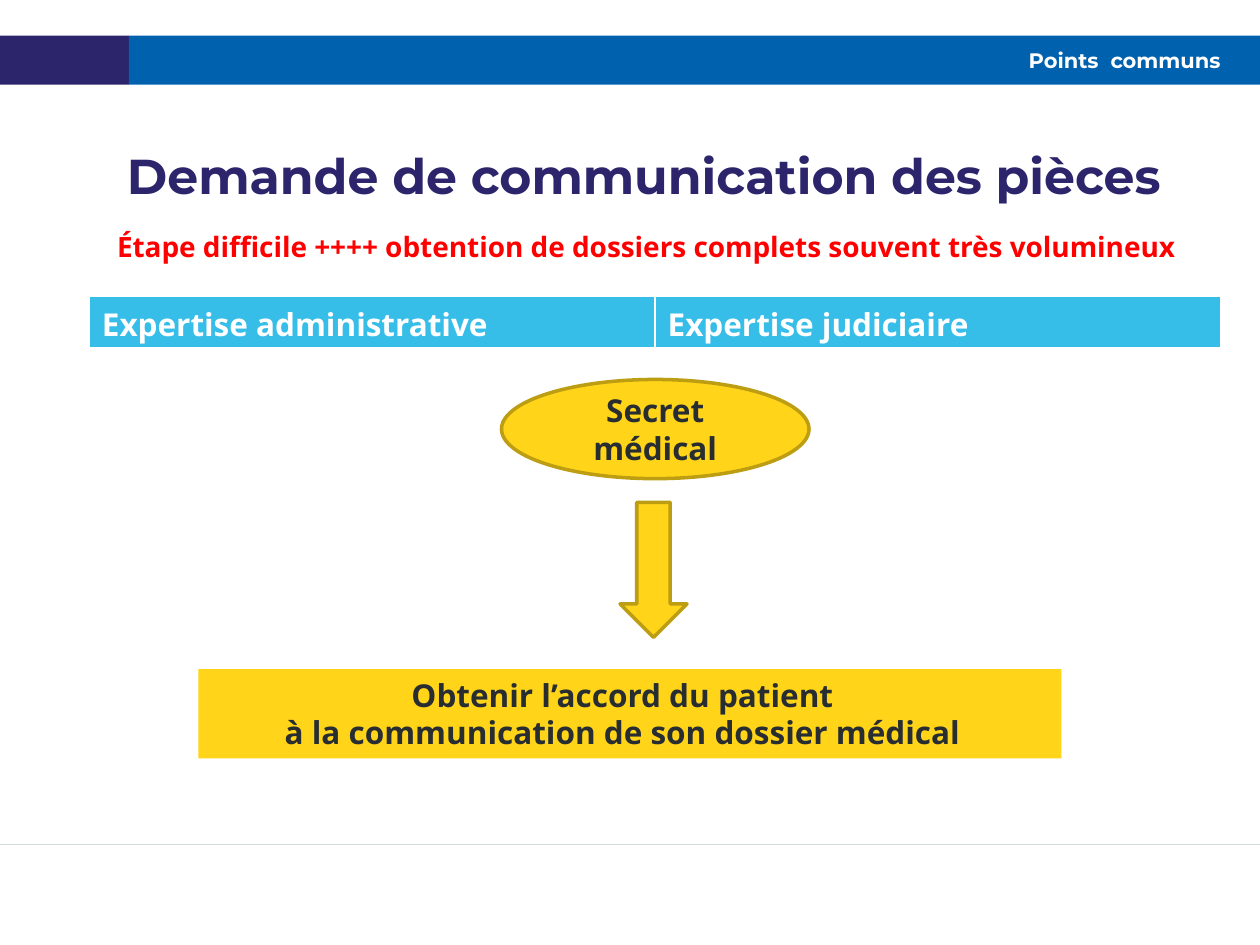
"""Build the slide on asking for the documents of a medical file."""
from lxml import etree
from pptx import Presentation
from pptx.dml.color import RGBColor
from pptx.enum.shapes import MSO_CONNECTOR, MSO_SHAPE
from pptx.enum.text import MSO_ANCHOR, PP_ALIGN
from pptx.oxml.ns import qn
from pptx.util import Cm, Pt

RECT, OVAL, DOWN = MSO_SHAPE.RECTANGLE, MSO_SHAPE.OVAL, MSO_SHAPE.DOWN_ARROW
LEFT, MID, RIGHT = PP_ALIGN.LEFT, PP_ALIGN.CENTER, PP_ALIGN.RIGHT
TOP, CENTRE = MSO_ANCHOR.TOP, MSO_ANCHOR.MIDDLE
STRAIGHT = MSO_CONNECTOR.STRAIGHT

WHITE = RGBColor(0xFF, 0xFF, 0xFF)
NAVY = RGBColor(0x2C, 0x25, 0x6B)
BLUE = RGBColor(0x00, 0x62, 0xAE)
SKY = RGBColor(0x36, 0xBD, 0xE8)
GOLD = RGBColor(0xFF, 0xD4, 0x19)
OCHRE = RGBColor(0xBD, 0x9D, 0x12)
INK = RGBColor(0x27, 0x2D, 0x31)
RED = RGBColor(0xFF, 0x00, 0x00)
GREY = RGBColor(0xD2, 0xD9, 0xDA)

HEAD, BODY = "Montserrat", "Open Sans"
WIDE, HIGH = 25.4, 19.05
SPLIT, BAND, DEEP = 2.6, 0.72, 0.99
EDGE, SPAN, ROW = 1.8, 22.81, 1.04
PAD = (0.25, 0.13, 0.25, 0.13)
NONE = (0, 0, 0, 0)

TOPIC = ["Points  communs"]
TITLE = ["Demande de communication des pièces"]
ALERT = ["Étape difficile ++++ obtention de dossiers complets souvent très volumineux"]
KINDS = ["Expertise administrative", "Expertise judiciaire"]
SECRET = ["Secret médical"]
ACCORD = ["Obtenir l’accord du patient", "à la communication de son dossier médical"]


def write(frame, lines, size, color, font=BODY, align=LEFT, pad=PAD, anchor=TOP):
    frame.word_wrap = True
    frame.vertical_anchor = anchor
    (frame.margin_left, frame.margin_top,
     frame.margin_right, frame.margin_bottom) = map(Cm, pad)
    for i, line in enumerate(lines):
        para = frame.add_paragraph() if i else frame.paragraphs[0]
        para.alignment = align
        run = para.add_run()
        run.text = line
        run.font.size, run.font.name, run.font.bold = Pt(size), font, True
        run.font.color.rgb = color


def draw(slide, kind, box, fill, edge=None):
    shape = slide.shapes.add_shape(kind, *map(Cm, box))
    shape.shadow.inherit = False
    shape.fill.solid()
    shape.fill.fore_color.rgb = fill
    if edge is None:
        shape.line.fill.background()
    else:
        shape.line.color.rgb = edge
        shape.line.width = Pt(2)
    return shape.text_frame


def label(slide, box):
    return slide.shapes.add_textbox(*map(Cm, box)).text_frame


def rule(slide, y):
    line = slide.shapes.add_connector(STRAIGHT, 0, Cm(y), Cm(WIDE), Cm(y))
    line.line.color.rgb = GREY
    line.line.width = Pt(0.75)
    etree.SubElement(line._element.spPr, qn("a:effectLst"))


def grid(slide):
    box = map(Cm, (EDGE, 5.98, SPAN, ROW))
    table = slide.shapes.add_table(1, len(KINDS), *box).table
    for i, kind in enumerate(KINDS):
        table.columns[i].width = Cm(SPAN / len(KINDS))
        cell = table.cell(0, i)
        cell.fill.solid()
        cell.fill.fore_color.rgb = SKY
        write(cell.text_frame, [kind], 18, WHITE)


def main():
    deck = Presentation()
    deck.slide_width, deck.slide_height = Cm(WIDE), Cm(HIGH)
    slide = deck.slides.add_slide(deck.slide_layouts[6])

    draw(slide, RECT, (0, BAND, SPLIT, DEEP), NAVY)
    draw(slide, RECT, (SPLIT, BAND, WIDE - SPLIT, DEEP), BLUE)
    rule(slide, 17.02)
    write(label(slide, (2.8, BAND, EDGE + SPAN - 2.8, DEEP)), TOPIC, 12, WHITE,
          HEAD, RIGHT, NONE, CENTRE)

    grid(slide)
    title = label(slide, (EDGE, 3.07, SPAN, 0.94))
    write(title, TITLE, 28, NAVY, HEAD, pad=(0.76, 0, 0, 0))
    title.paragraphs[0].line_spacing = 0.9

    draw(slide, DOWN, (12.5, 10.13, 1.35, 2.72), GOLD, OCHRE)
    write(draw(slide, RECT, (4, 13.49, 17.4, 1.8), GOLD), ACCORD, 18, INK,
          align=MID, pad=(0.25, 0.13, 0.55, 0.13))
    write(draw(slide, OVAL, (10.11, 7.65, 6.2, 2), GOLD, OCHRE), SECRET, 18, INK,
          align=MID, anchor=CENTRE)
    write(label(slide, (2.11, 4.5, 22, 0.94)), ALERT, 16, RED)
    deck.save("out.pptx")


if __name__ == "__main__":
    main()
